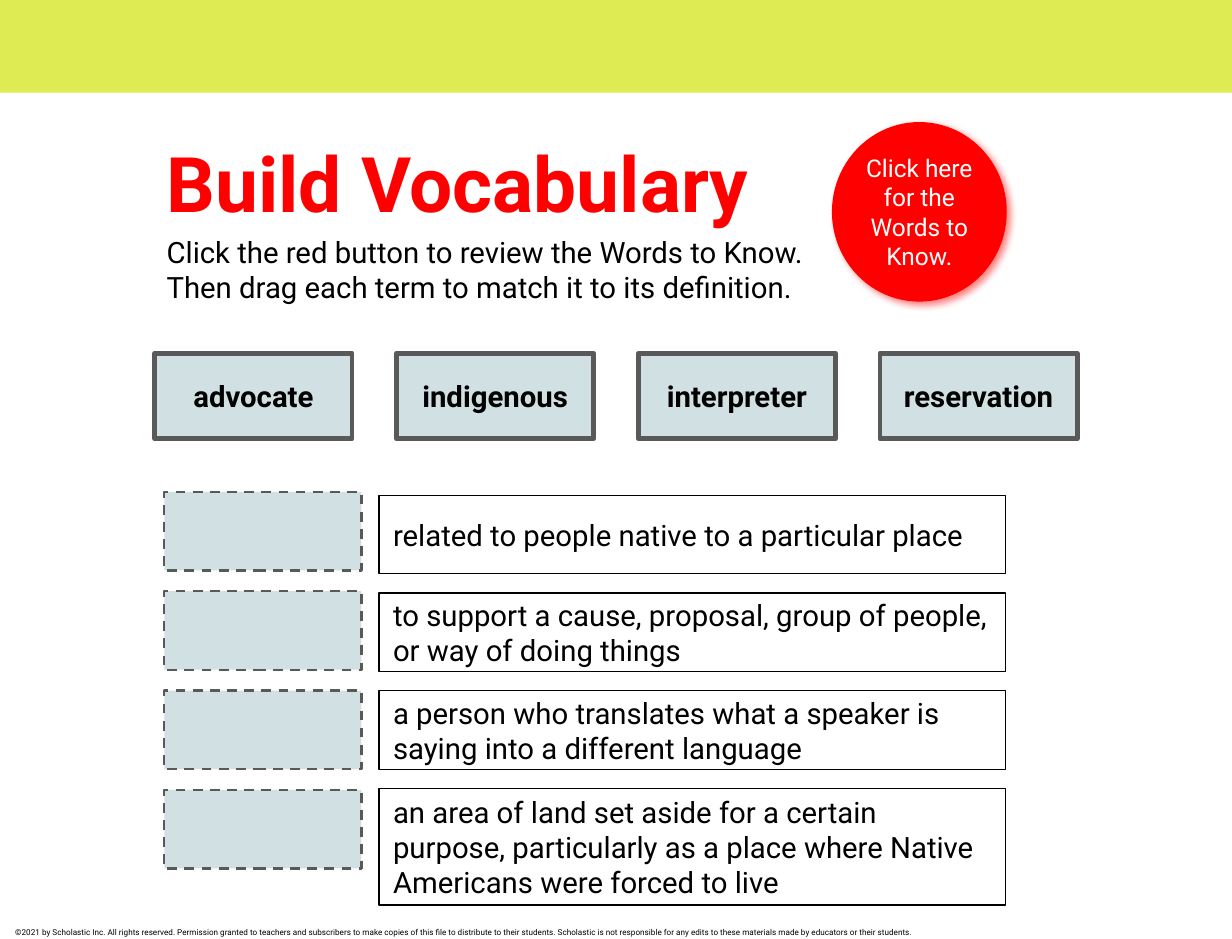
from lxml import etree
from pptx import Presentation
from pptx.dml.color import RGBColor
from pptx.enum.dml import MSO_LINE
from pptx.enum.shapes import MSO_SHAPE
from pptx.enum.text import MSO_ANCHOR, PP_ALIGN
from pptx.oxml.ns import qn
from pptx.util import Inches, Pt

COLORS = {
    "band": "DEEB52",
    "red": "FF0000",
    "tile": "D0E0E3",
    "border": "595959",
    "black": "000000",
    "white": "FFFFFF",
}
FONT = "Roboto"
TERMS = ["advocate", "indigenous", "interpreter", "reservation"]
DEFINITIONS = [
    "related to people native to a particular place",
    "to support a cause, proposal, group of people, or way of doing things",
    "a person who translates what a speaker is saying into a different language",
    "an area of land set aside for a certain purpose, particularly as a place "
    "where Native Americans were forced to live",
]
COPYRIGHT = (
    "©2021 by Scholastic Inc. All rights reserved. Permission granted to teachers "
    "and subscribers to make copies of this file to distribute to their students. "
    "Scholastic is not responsible for any edits to these materials made by "
    "educators or their students."
)


def rgb(name):
    return RGBColor.from_string(COLORS[name])


class SlideBuilder:
    def __init__(self, slide):
        self.slide = slide

    def set_text(self, sp, text, size=18, color="black", bold=False,
                 align=PP_ALIGN.LEFT, anchor=MSO_ANCHOR.MIDDLE, inset=0.12):
        tf = sp.text_frame
        tf.word_wrap = True
        tf.vertical_anchor = anchor
        tf.margin_left = tf.margin_right = Inches(inset)
        tf.margin_top = tf.margin_bottom = Inches(inset)
        p = tf.paragraphs[0]
        p.text = text
        p.alignment = align
        for r in p.runs:
            r.font.name = FONT
            r.font.size = Pt(size)
            r.font.bold = bold
            r.font.color.rgb = rgb(color)

    def text(self, x, y, w, h, text, **style):
        sp = self.slide.shapes.add_textbox(Inches(x), Inches(y), Inches(w), Inches(h))
        self.set_text(sp, text, **style)

    def shape(self, x, y, w, h, fill=None, line=None, width=0.75, dash=None,
              kind=MSO_SHAPE.RECTANGLE):
        sp = self.slide.shapes.add_shape(kind, Inches(x), Inches(y), Inches(w), Inches(h))
        sp.shadow.inherit = False
        if fill:
            sp.fill.solid()
            sp.fill.fore_color.rgb = rgb(fill)
        else:
            sp.fill.background()
        if line:
            sp.line.color.rgb = rgb(line)
            sp.line.width = Pt(width)
            if dash:
                sp.line.dash_style = dash
        else:
            sp.line.fill.background()
        return sp

    def glow_shadow(self, sp, color, alpha, blur, dist, angle):
        """Add an outer shadow: alpha in percent, lengths in points, angle in degrees."""
        effects = sp.element.spPr.find(qn("a:effectLst"))
        shadow = etree.SubElement(
            effects, qn("a:outerShdw"), blurRad=str(Pt(blur)), dist=str(Pt(dist)),
            dir=str(angle * 60000), algn="bl", rotWithShape="0")
        clr = etree.SubElement(shadow, qn("a:srgbClr"), val=COLORS[color])
        etree.SubElement(clr, qn("a:alpha"), val=str(alpha * 1000))

    def button(self, x, y, w, h, text):
        sp = self.shape(x, y, w, h, fill="red", kind=MSO_SHAPE.OVAL)
        self.glow_shadow(sp, "red", alpha=50, blur=4.5, dist=3, angle=43)
        self.set_text(sp, text, size=15, color="white", align=PP_ALIGN.CENTER, inset=0)

    def term(self, x, y, text):
        sp = self.shape(x, y, 1.68, 0.73, fill="tile", line="border", width=3)
        self.set_text(sp, text, bold=True, align=PP_ALIGN.CENTER, inset=0.1)

    def definition(self, y, h, text):
        self.set_text(self.shape(3.23, y, 5.34, h, line="black"), text)

    def drop_slot(self, y):
        self.shape(1.4, y, 1.68, 0.67, fill="tile", line="border", width=1.5,
                   dash=MSO_LINE.DASH)


def main():
    prs = Presentation()
    prs.slide_width, prs.slide_height = Inches(10.5), Inches(8)
    s = SlideBuilder(prs.slides.add_slide(prs.slide_layouts[6]))

    s.shape(0, -0.01, 10.5, 0.8, fill="band")
    s.text(0.13, 7.9, 8.77, 0.1, COPYRIGHT, size=5, anchor=MSO_ANCHOR.TOP, inset=0)
    s.text(1.3, 1.04, 5.48, 0.89, "Build Vocabulary", size=47, color="red",
           bold=True, anchor=MSO_ANCHOR.TOP)
    s.text(1.3, 1.85, 6.24, 0.89,
           "Click the red button to review the Words to Know.\n"
           "Then drag each term to match it to its definition.")

    last = len(DEFINITIONS) - 1
    for i, text in enumerate(DEFINITIONS):
        s.definition(4.22 + 2.5 * i / last, 0.99 if i == last else 0.67, text)
        s.drop_slot(4.19 + 2.54 * i / last)

    s.button(7.09, 1.04, 1.49, 1.53, "Click here for the Words to Know.")
    for i, text in enumerate(TERMS):
        s.term(1.32 + 2.06 * i, 3.01, text)

    prs.save("out.pptx")


if __name__ == "__main__":
    main()
